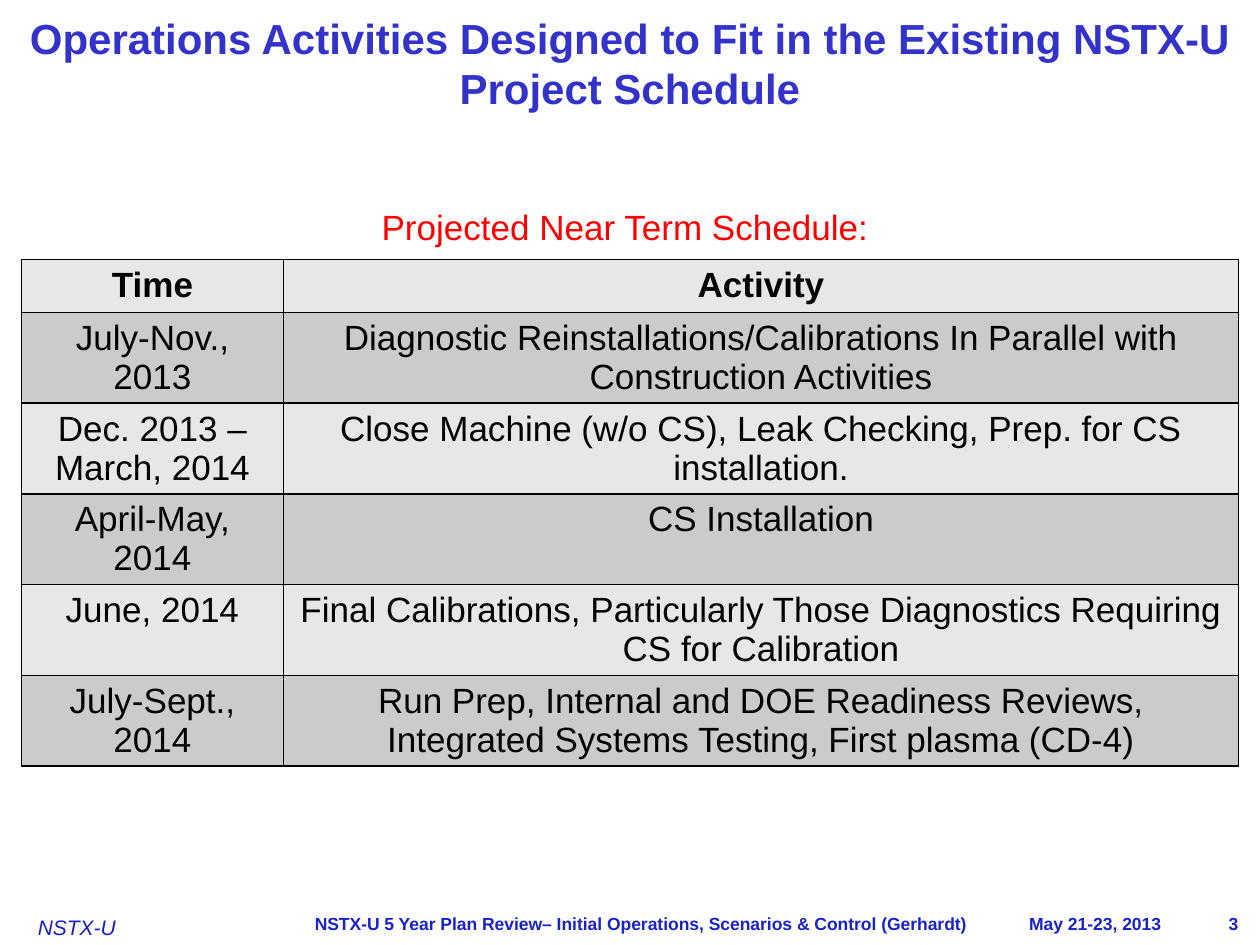
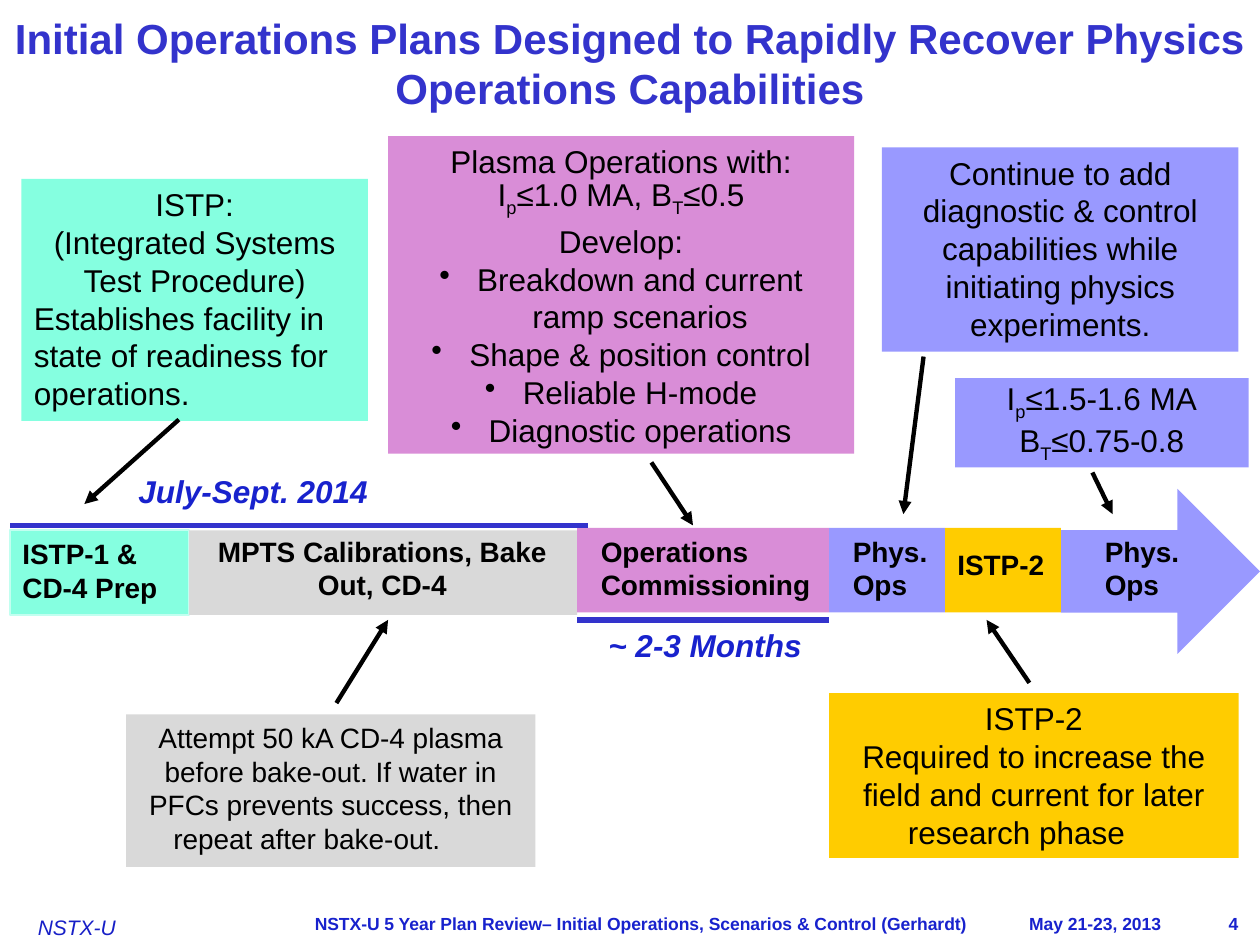
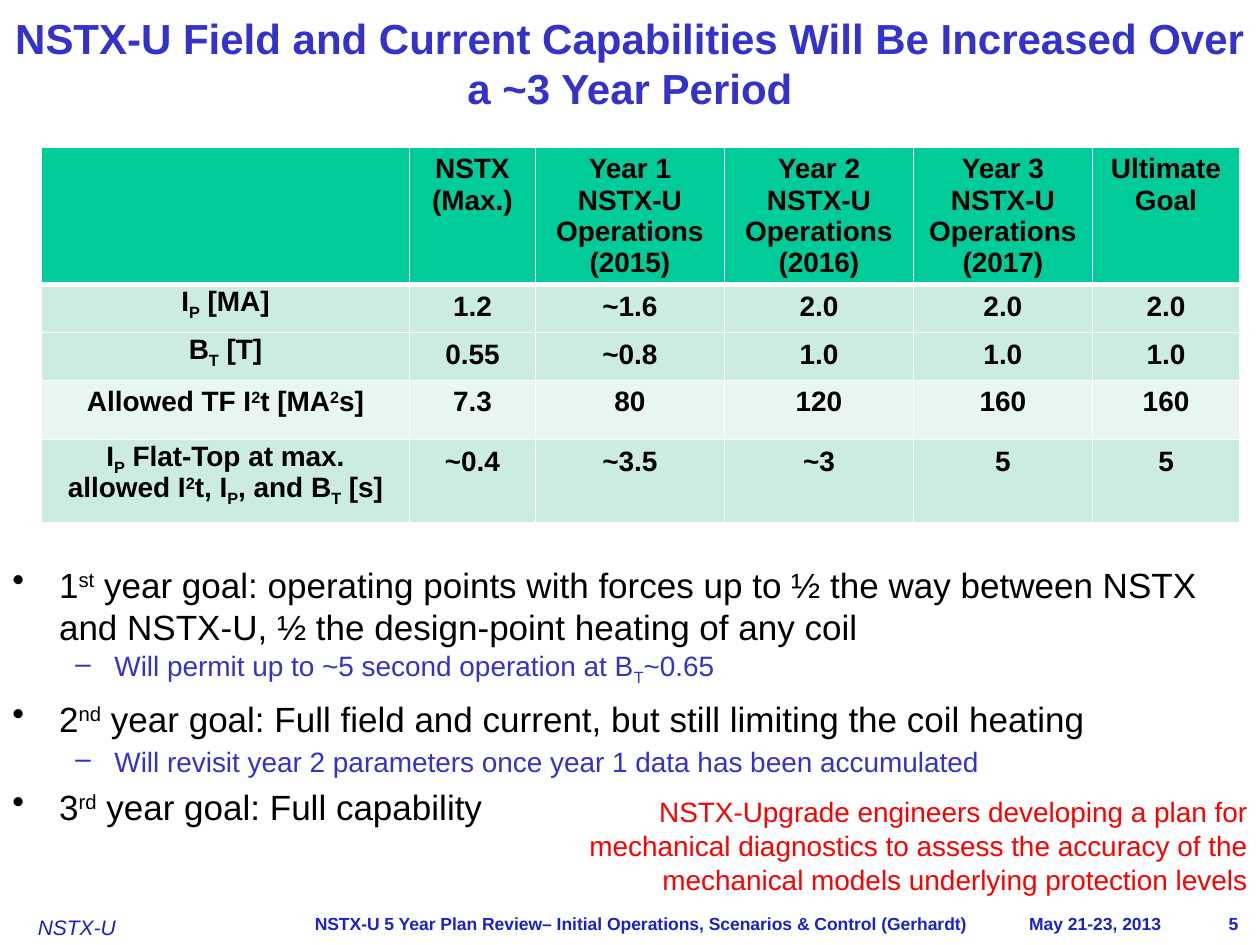
from dataclasses import dataclass
from lxml.etree import SubElement
from pptx import Presentation
from pptx.dml.color import RGBColor
from pptx.enum.shapes import MSO_CONNECTOR, MSO_SHAPE
from pptx.enum.text import MSO_ANCHOR, PP_ALIGN
from pptx.oxml import parse_xml
from pptx.oxml.ns import nsdecls, qn
from pptx.util import Inches, Pt


@dataclass(frozen=True)
class Theme:
    font: str = "Arial"
    head: int = 24
    main: int = 20
    note: int = 18
    small: int = 16
    logo: int = 12
    foot: int = 10
    lead: float = 1.2
    tight: float = 1.115
    black: str = "000000"
    white: str = "FFFFFF"
    red: str = "FF0000"
    blue: str = "3333CC"
    navy: str = "1822CD"
    mark: str = "171FC7"
    pale: str = "E7E7E7"
    dark: str = "CBCBCB"
    aqua: str = "85FFE0"
    rim: str = "C2FFF0"
    gray: str = "D9D9D9"
    pink: str = "D98DD7"
    lilac: str = "9999FF"
    gold: str = "FFCC00"
    green: str = "00CC99"
    mint: str = "CBECDE"
    frost: str = "E7F6EF"


T = Theme()
LEFT, MID, RIGHT = PP_ALIGN.LEFT, PP_ALIGN.CENTER, PP_ALIGN.RIGHT

HEADS = [
    "Operations Activities Designed to Fit in the Existing NSTX-U Project Schedule",
    "Initial Operations Plans Designed to Rapidly Recover Physics Operations Capabilities",
    "NSTX-U Field and Current Capabilities Will Be Increased Over a ~3 Year Period",
]
FIRST = 3
FOOT = "NSTX-U 5 Year Plan Review– Initial Operations, Scenarios & Control (Gerhardt)\tMay 21-23, 2013\t"

PLAN = [
    ["Time", "Activity"],
    ["July-Nov., 2013",
     "Diagnostic Reinstallations/Calibrations In Parallel with Construction Activities"],
    ["Dec. 2013 – March, 2014",
     "Close Machine (w/o CS), Leak Checking, Prep. for CS installation."],
    ["April-May, 2014", "CS Installation"],
    ["June, 2014",
     "Final Calibrations, Particularly Those Diagnostics Requiring CS for Calibration"],
    ["July-Sept., 2014",
     "Run Prep, Internal and DOE Readiness Reviews, Integrated Systems Testing, First plasma (CD-4)"],
]

DOT = dict(mark="•", left=0.3, hang=0.3)
NOTES = [
    ((3.08, 1.08, 3.7, 2.52), T.pink, T.note, [
        "Plasma Operations with:",
        "I|_p|≤1.0 MA, B|_T|≤0.5",
        "Develop:",
        ("Breakdown and current ramp scenarios", DOT),
        ("Shape & position control", DOT),
        ("Reliable H-mode", DOT),
        ("Diagnostic operations", DOT)]),
    ((7, 1.17, 2.83, 1.62), T.lilac, T.note, [
        "Continue to add diagnostic & control capabilities while initiating physics experiments."]),
    ((0.17, 1.42, 2.75, 1.92), T.aqua, T.note, [
        "ISTP:",
        "(Integrated Systems Test Procedure)",
        ("Establishes facility in state of readiness for operations.", dict(align=LEFT))]),
    ((6.58, 5.5, 3.25, 1.31), T.gold, T.note, [
        "ISTP-2",
        "Required to increase the field and current for later research phase\t"]),
    ((1, 5.67, 3.25, 1.21), T.gray, T.small, [
        "Attempt 50 kA CD-4 plasma before bake-out. If water in PFCs prevents success, "
        "then repeat after bake-out.\t"]),
    ((7.58, 3, 2.33, 0.71), T.lilac, T.note, [
        "I|_p|≤1.5-1.6 MA", "B|_T|≤0.75-0.8"]),
]

BAND = 0.67
EDGES = [0.08, 1.5, 4.58, 6.58, 7.5, 8.42]
BARS = [(4.21, T.aqua), (4.21, T.gray), (4.19, T.pink), (4.19, T.lilac), (4.19, T.gold)]
TAGS = [
    ((0.08, 4.21, 1.5, 0.64), ["ISTP-1 & CD-4 Prep"], LEFT),
    ((1.57, 4.19, 2.93, 0.64), ["MPTS Calibrations, Bake Out, CD-4"], MID),
    ((4.67, 4.19, 1.89, 0.64), ["Operations", "Commissioning"], LEFT),
    ((6.67, 4.19, 0.92, 0.64), ["Phys. Ops"], LEFT),
    ((7.5, 4.3, 0.9, 0.37), ["ISTP-2"], LEFT),
    ((8.67, 4.19, 1.33, 0.64), ["Phys.", "Ops"], LEFT),
]
SPANS = [
    ((1, 3.7, 2.09, 0.4), "July-Sept. 2014", (0.08, 4.17, 4.67, 4.17)),
    ((4.73, 4.92, 1.81, 0.4), "~ 2-3 Months", (4.58, 4.92, 6.58, 4.92)),
]
ARROWS = [
    (5.17, 3.67, 5.5, 4.17),
    (8.67, 3.75, 8.83, 4.08),
    (8.17, 5.42, 7.83, 4.92),
    (1.42, 3.33, 0.67, 4),
    (2.67, 5.58, 3.08, 4.92),
    (7.33, 2.83, 7.17, 4.08),
]

GOALS = [
    ["", "NSTX\n(Max.)", "Year 1 NSTX-U\nOperations\n(2015)", "Year 2 NSTX-U\nOperations\n(2016)",
     "Year 3 NSTX-U Operations\n(2017)", "Ultimate Goal"],
    ["I|_P| [MA]", "1.2", "~1.6", "2.0", "2.0", "2.0"],
    ["B|_T| [T]", "0.55", "~0.8", "1.0", "1.0", "1.0"],
    ["Allowed TF I|^2|t [MA|^2|s]", "7.3", "80", "120", "160", "160"],
    ["I|_P| Flat-Top at max. allowed I|^2|t, I|_P|, and B|_T| [s]", "~0.4", "~3.5", "~3", "5", "5"],
]
TOP = dict(mark="•", left=0.37, hang=0.37, gap=4)
SUB = dict(mark="–", left=0.81, hang=0.31, gap=3.2, size=T.small, ink=T.blue)
STEPS = [
    ("1|^st| year goal: operating points with forces up to ½ the way between NSTX and NSTX-U, "
     "½ the design-point heating of any coil", TOP),
    ("Will permit up to ~5 second operation at B|_T|~0.65", SUB),
    ("2|^nd| year goal: Full field and current, but still limiting the coil heating", TOP),
    ("Will revisit year 2 parameters once year 1 data has been accumulated", SUB),
    ("3|^rd| year goal: Full capability", TOP),
]
ASIDE = ("NSTX-Upgrade engineers developing a plan for mechanical diagnostics to assess "
         "the accuracy of the mechanical models underlying protection levels")


def tint(code):
    return RGBColor.from_string(code)


def place(spot):
    return [Inches(v) for v in spot]


def style(para, text, size, ink=T.black, bold=False, slant=False, align=LEFT,
          lead=T.lead, mark="", left=0, hang=0, gap=0, tabs=()):
    props = para._p.get_or_add_pPr()
    if mark:
        props.set("marL", str(Inches(left)))
        props.set("indent", str(-Inches(hang)))
        SubElement(props, qn("a:buChar")).set("char", mark)
    if tabs:
        stops = SubElement(props, qn("a:tabLst"))
        for pos, side in tabs:
            stop = SubElement(stops, qn("a:tab"))
            stop.set("pos", str(Inches(pos)))
            stop.set("algn", side)
    bits = text.split("|")
    para.text = bits[0]
    for bit in bits[1:]:
        run = para.add_run()
        run.text = bit.lstrip("_^")
        shift = {"_": "-25000", "^": "30000"}.get(bit[:1])
        if shift:
            run._r.get_or_add_rPr().set("baseline", shift)
    para.alignment = align
    para.line_spacing = Pt(round(size * lead, 1))
    if gap:
        para.space_before = Pt(gap)
    if "|_" in text:
        para.space_after = Pt(round(size * 0.13, 1))
    for run in para.runs:
        font = run.font
        font.name, font.size, font.bold, font.italic = T.font, Pt(size), bold, slant
        font.color.rgb = tint(ink)


def write(frame, lines, **look):
    for i, line in enumerate(lines):
        text, more = (line, {}) if isinstance(line, str) else line
        para = frame.add_paragraph() if i else frame.paragraphs[0]
        style(para, text, **{**look, **more, **({} if i else {"gap": 0})})


def label(slide, spot, lines, wrap=True, inset=True, **look):
    frame = slide.shapes.add_textbox(*place(spot)).text_frame
    frame.word_wrap = wrap
    if not inset:
        frame.margin_left = frame.margin_right = frame.margin_top = frame.margin_bottom = 0
    write(frame, lines, **look)
    return frame


def block(slide, spot, fill, kind=MSO_SHAPE.RECTANGLE):
    shape = slide.shapes.add_shape(kind, *place(spot))
    shape.shadow.inherit = False
    shape.fill.solid()
    shape.fill.fore_color.rgb = tint(fill)
    shape.line.fill.background()
    return shape


def rule(slide, ends, ink, width, arrow=False):
    line = slide.shapes.add_connector(MSO_CONNECTOR.STRAIGHT, *place(ends))
    line.line.color.rgb = tint(ink)
    line.line.width = Pt(width)
    if arrow:
        SubElement(line.line._get_or_add_ln(), qn("a:tailEnd")).set("type", "triangle")
    SubElement(line._element.spPr, qn("a:effectLst"))


def edge(cell, ink, widths):
    props = cell._tc.get_or_add_tcPr()
    for i, (side, width) in enumerate(zip("LRTB", widths)):
        props.insert(i, parse_xml(
            f'<a:ln{side} {nsdecls("a")} w="{Pt(width)}"><a:solidFill>'
            f'<a:srgbClr val="{ink}"/></a:solidFill></a:ln{side}>'))


def grid(slide, spot, rows, wide, high, fills, ink, size, bold, thick=1):
    shape = slide.shapes.add_table(len(rows), len(wide), *place((*spot, sum(wide), sum(high))))
    table = shape.table
    for col, width in zip(table.columns, wide):
        col.width = Inches(width)
    for r, texts in enumerate(rows):
        table.rows[r].height = Inches(high[r])
        for c, text in enumerate(texts):
            cell = table.cell(r, c)
            cell.fill.solid()
            cell.fill.fore_color.rgb = tint(fills[r])
            edge(cell, ink, (1, 1, thick if r == 1 else 1, thick if r == 0 else 1))
            write(cell.text_frame, text.split("\n"), size=size, align=MID,
                  bold=bold or r == 0, lead=T.tight)


def start(deck, i):
    slide = deck.slides.add_slide(deck.slide_layouts[6])
    label(slide, (0.3, 7.26, 0.87, 0.2), ["NSTX-U"], inset=False,
          size=T.logo, ink=T.mark, slant=True)
    label(slide, (2.4, 7.2, 7.6, 0.27), [FOOT + str(FIRST + i)], size=T.foot, ink=T.navy,
          bold=True, tabs=((5.67, "l"), (7.33, "r")))
    frame = label(slide, (0, 0, 10, 1), [HEADS[i]], size=T.head, ink=T.blue,
                  bold=True, align=MID)
    frame.vertical_anchor = MSO_ANCHOR.MIDDLE
    return slide


def dates(slide):
    label(slide, (0.17, 1.58, 9.58, 0.83), ["Projected Near Term Schedule:"],
          size=T.main, ink=T.red, align=MID)
    grid(slide, (0.17, 2.06), PLAN, [2.08, 7.58], [0.42] + [0.72] * 5,
         [T.pale, T.dark] * 3, T.black, T.main, False)


def flow(slide):
    block(slide, (EDGES[-1], 3.88, 10 - EDGES[-1], 1.31), T.lilac, MSO_SHAPE.RIGHT_ARROW)
    for i, (top, fill) in enumerate(BARS):
        bar = block(slide, (EDGES[i], top, EDGES[i + 1] - EDGES[i], BAND), fill)
        if i == 0:
            bar.line.color.rgb = tint(T.rim)
            bar.line.width = Pt(1.25)
    for spot, lines, align in TAGS:
        label(slide, spot, lines, size=T.small, bold=True, align=align)
    for spot, fill, size, lines in NOTES:
        frame = block(slide, spot, fill).text_frame
        frame.word_wrap = True
        frame.vertical_anchor = MSO_ANCHOR.TOP
        write(frame, lines, size=size, align=MID)
    for spot, text, ends in SPANS:
        label(slide, spot, [text], wrap=False, size=T.note, ink=T.navy, bold=True, slant=True)
        rule(slide, ends, T.blue, 3)
    for ends in ARROWS:
        rule(slide, ends, T.black, 2.5, arrow=True)


def goals(slide):
    label(slide, (0, 4.42, 9.75, 2.25), STEPS, size=T.main)
    grid(slide, (0.33, 1.17), GOALS, [2.92, 1, 1.5, 1.5, 1.42, 1.17],
         [1.08, 0.38, 0.38, 0.47, 0.66], [T.green, T.mint, T.mint, T.frost, T.mint],
         T.white, T.small, True, thick=3)
    label(slide, (4.17, 6.26, 5.83, 0.91), [ASIDE], size=T.small, ink=T.red, align=RIGHT)


def main():
    deck = Presentation()
    deck.slide_width, deck.slide_height = Inches(10), Inches(7.5)
    for i, fill in enumerate((dates, flow, goals)):
        fill(start(deck, i))
    deck.save("out.pptx")


if __name__ == "__main__":
    main()
